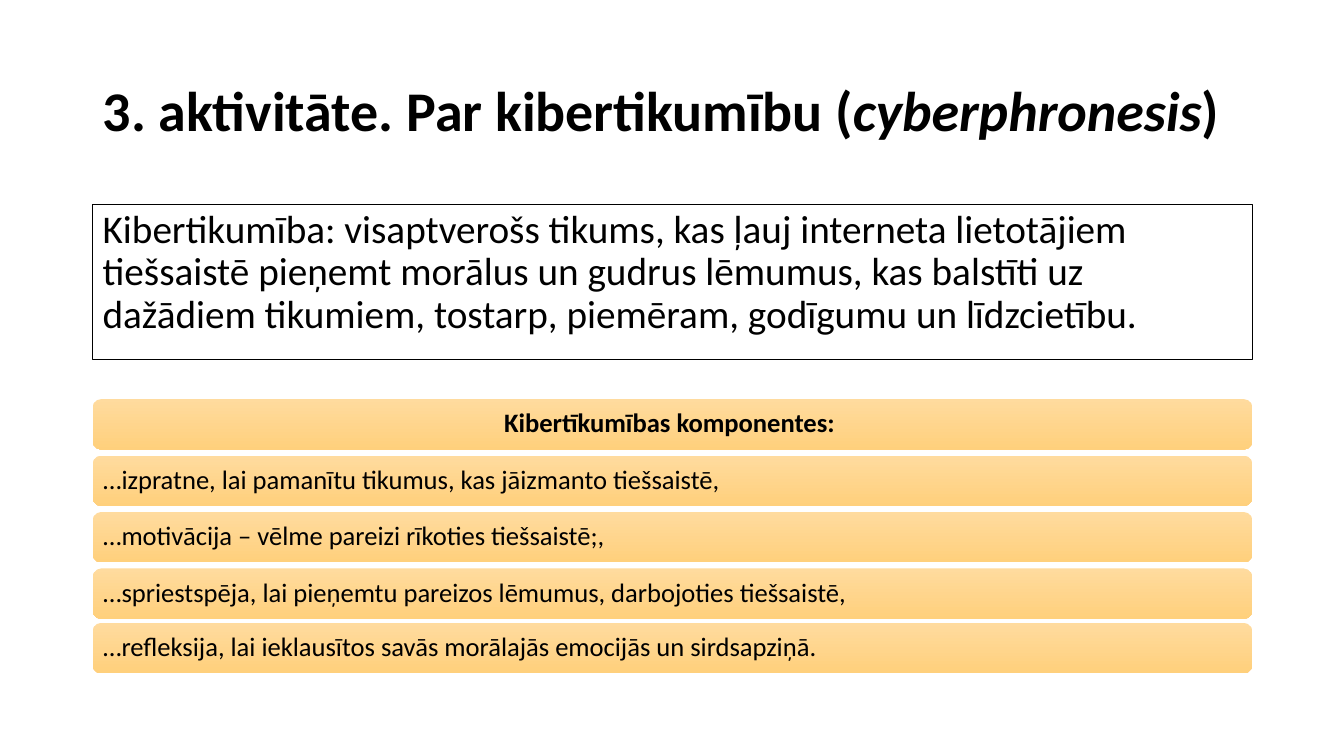
"""Build the slide on cyber-wisdom and its components."""
from dataclasses import dataclass

from pptx import Presentation
from pptx.dml.color import RGBColor
from pptx.enum.shapes import MSO_SHAPE as Shape
from pptx.enum.text import MSO_ANCHOR as Anchor, MSO_AUTO_SIZE as AutoSize, PP_ALIGN as Align
from pptx.util import Inches, Pt


@dataclass(frozen=True)
class Theme:
    font: str = "Calibri"
    ink: str = "000000"
    bar_top: str = "FFDB9E"
    bar_bottom: str = "FFD07C"
    title_size: int = 40
    body_size: int = 28
    bar_size: int = 19


LEFT, WIDTH = 0.92, 11.5
BAR_HEIGHT = 0.5
TITLE = [("3. aktivitāte. Par kibertikumību (", False), ("cyberphronesis", True), (")", False)]
DEFINITION = (
    "Kibertikumība: visaptverošs tikums, kas ļauj interneta lietotājiem tiešsaistē "
    "pieņemt morālus un gudrus lēmumus, kas balstīti uz dažādiem tikumiem, tostarp, "
    "piemēram, godīgumu un līdzcietību."
)
HEADING = (3.96, "Kibertīkumības komponentes: ")
COMPONENTS = [
    (4.52, "…izpratne, lai pamanītu tikumus, kas jāizmanto tiešsaistē,"),
    (5.08, "…motivācija – vēlme pareizi rīkoties tiešsaistē;,"),
    (5.64, "…spriestspēja, lai pieņemtu pareizos lēmumus, darbojoties tiešsaistē,"),
    (6.18, "…refleksija, lai ieklausītos savās morālajās emocijās un sirdsapziņā."),
]


def set_text(shape, runs, *, font, color, size, bold=False, align=Align.LEFT,
             anchor=Anchor.MIDDLE, inset=(0.1, 0.05)):
    frame = shape.text_frame
    frame.word_wrap = True
    frame.auto_size = AutoSize.NONE
    frame.vertical_anchor = anchor
    frame.margin_left = frame.margin_right = Inches(inset[0])
    frame.margin_top = frame.margin_bottom = Inches(inset[1])
    paragraph = frame.paragraphs[0]
    paragraph.alignment = align
    paragraph.line_spacing = 0.9
    for text, italic in runs:
        run = paragraph.add_run()
        run.text = text
        run.font.name = font
        run.font.size = Pt(size)
        run.font.bold = bold
        run.font.italic = italic
        run.font.color.rgb = RGBColor.from_string(color)


class SlideBuilder:
    def __init__(self, slide, theme):
        self.slide = slide
        self.theme = theme

    def label(self, shape, runs, **options):
        set_text(shape, runs, font=self.theme.font, color=self.theme.ink, **options)

    def title(self, runs, top, height):
        shape = self.slide.shapes.title
        shape.left, shape.top = Inches(LEFT), Inches(top)
        shape.width, shape.height = Inches(WIDTH), Inches(height)
        self.label(shape, runs, size=self.theme.title_size, bold=True)

    def block(self, kind, top, height):
        shape = self.slide.shapes.add_shape(
            kind, Inches(LEFT), Inches(top), Inches(WIDTH), Inches(height))
        shape.shadow.inherit = False
        return shape

    def definition(self, text, top, height):
        shape = self.block(Shape.RECTANGLE, top, height)
        shape.fill.background()
        shape.line.color.rgb = RGBColor.from_string(self.theme.ink)
        shape.line.width = Pt(0.75)
        self.label(shape, [(text, False)], size=self.theme.body_size, anchor=Anchor.TOP)

    def bar(self, text, top, **options):
        shape = self.block(Shape.ROUNDED_RECTANGLE, top, BAR_HEIGHT)
        shape.line.fill.background()
        shape.fill.gradient()
        shape.fill.gradient_angle = 270
        colors = (self.theme.bar_top, self.theme.bar_bottom)
        for stop, color in zip(shape.fill.gradient_stops, colors):
            stop.color.rgb = RGBColor.from_string(color)
        self.label(shape, [(text, False)], size=self.theme.bar_size,
                   inset=(0.08, 0.05), **options)


def main():
    presentation = Presentation()
    presentation.slide_width, presentation.slide_height = Inches(13.33), Inches(7.5)
    title_only = presentation.slide_layouts[5]
    builder = SlideBuilder(presentation.slides.add_slide(title_only), Theme())
    builder.title(TITLE, 0.4, 1.45)
    builder.definition(DEFINITION, 2.03, 1.54)
    top, text = HEADING
    builder.bar(text, top, bold=True, align=Align.CENTER)
    for top, text in COMPONENTS:
        builder.bar(text, top)
    presentation.save("out.pptx")


if __name__ == "__main__":
    main()
